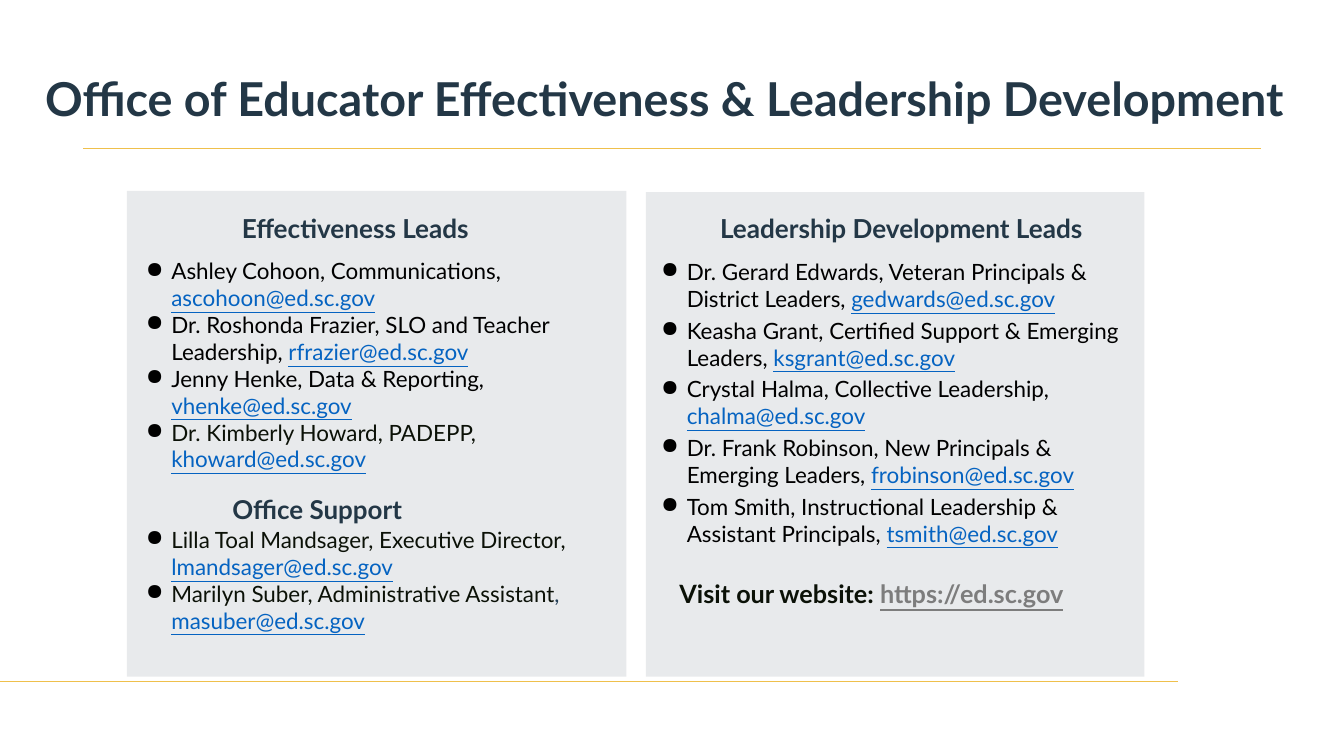
"""Build the contact slide of an educator effectiveness office."""
from dataclasses import dataclass
from typing import NamedTuple

import lxml.etree
import pptx
import pptx.dml.color
import pptx.enum.shapes
import pptx.enum.text
import pptx.oxml.ns
import pptx.util

EMU_PER_PX = 9144
FONT = "Lato"
NAVY = pptx.dml.color.RGBColor(0x23, 0x37, 0x46)
GOLD = pptx.dml.color.RGBColor(0xEF, 0xC0, 0x4C)
BLACK = pptx.dml.color.RGBColor(0x00, 0x00, 0x00)
INK = pptx.dml.color.RGBColor(0x0B, 0x11, 0x07)
SLATE = pptx.dml.color.RGBColor(0x23, 0x3F, 0x58)
LINK_BLUE = pptx.dml.color.RGBColor(0x05, 0x63, 0xC1)
GRAY = pptx.dml.color.RGBColor(0x7D, 0x7D, 0x7D)
LEFT = pptx.enum.text.PP_ALIGN.LEFT
CENTER = pptx.enum.text.PP_ALIGN.CENTER


class Box(NamedTuple):
    left: int
    top: int
    width: int
    height: int


@dataclass(frozen=True)
class Heading:
    text: str
    box: Box
    size: float
    align: int = CENTER
    line_points: float | None = None
    inset: tuple[int, int] = (0, 0)


@dataclass(frozen=True)
class Contact:
    role: str
    email: str
    color: pptx.dml.color.RGBColor = BLACK
    separator_color: pptx.dml.color.RGBColor | None = None
    gap_points: float = 0


@dataclass(frozen=True)
class ContactList:
    box: Box
    contacts: tuple[Contact, ...]
    margin: int
    level: int = 0
    gap_points: float = 0


HEADINGS = (
    Heading("Office of Educator Effectiveness & Leadership Development",
            Box(67, 118, 1958, 72), 50, LEFT, 50),
    Heading("Effectiveness Leads", Box(294, 329, 469, 36), 28, line_points=24),
    Heading("Office Support", Box(247, 728, 450, 62), 27.8, inset=(15, 7)),
    Heading("Leadership Development Leads", Box(1045, 329, 592, 36), 28, line_points=24),
)
EFFECTIVENESS = ContactList(Box(217, 383, 744, 565), (
    Contact("Ashley Cohoon, Communications", "ascohoon@ed.sc.gov"),
    Contact("Dr. Roshonda Frazier, SLO and Teacher Leadership", "rfrazier@ed.sc.gov"),
    Contact("Jenny Henke, Data & Reporting", "vhenke@ed.sc.gov"),
    Contact("Dr. Kimberly Howard, PADEPP", "khoward@ed.sc.gov", INK),
    Contact("Lilla Toal Mandsager, Executive Director", "lmandsager@ed.sc.gov", INK,
            gap_points=57.6),
    Contact("Marilyn Suber, Administrative Assistant", "masuber@ed.sc.gov", INK, SLATE),
), margin=38)
LEADERSHIP = ContactList(Box(961, 384, 722, 572), (
    Contact("Dr. Gerard Edwards, Veteran Principals & District Leaders", "gedwards@ed.sc.gov"),
    Contact("Keasha Grant, Certified Support & Emerging Leaders", "ksgrant@ed.sc.gov"),
    Contact("Crystal Halma, Collective Leadership", "chalma@ed.sc.gov"),
    Contact("Dr. Frank Robinson, New Principals & Emerging Leaders", "frobinson@ed.sc.gov"),
    Contact("Tom Smith, Instructional Leadership & Assistant Principals", "tsmith@ed.sc.gov"),
), margin=61, level=1, gap_points=5.3)
PANELS = (Box(189, 284, 743, 723), Box(961, 286, 742, 721))
RULES = ((124, 1876, 221), (0, 1753, 1014))


def px(length: int) -> pptx.util.Emu:
    """Turn a length in px into EMU."""
    return pptx.util.Emu(length * EMU_PER_PX)


def add_panel(slide, box: Box) -> None:
    """Draw a pale translucent panel."""
    panel = slide.shapes.add_shape(
        pptx.enum.shapes.MSO_SHAPE.RECTANGLE, *map(px, box))
    panel.shadow.inherit = False
    panel.line.fill.background()
    panel.fill.solid()
    panel.fill.fore_color.rgb = NAVY
    color = panel._element.spPr.find(".//" + pptx.oxml.ns.qn("a:srgbClr"))
    lxml.etree.SubElement(color, pptx.oxml.ns.qn("a:alpha"), val="10000")


def add_rule(slide, start: int, end: int, top: int) -> None:
    """Draw a thin horizontal gold rule."""
    rule = slide.shapes.add_connector(
        pptx.enum.shapes.MSO_CONNECTOR.STRAIGHT, px(start), px(top), px(end), px(top))
    rule.line.color.rgb = GOLD
    rule.line.width = pptx.util.Pt(1.5)
    lxml.etree.SubElement(rule._element.spPr, pptx.oxml.ns.qn("a:effectLst"))


def add_frame(slide, box: Box, inset: tuple[int, int] = (0, 0)):
    """Add a wrapping text box and return its text frame."""
    frame = slide.shapes.add_textbox(*map(px, box)).text_frame
    frame.word_wrap = True
    frame.margin_left = frame.margin_right = px(inset[0])
    frame.margin_top = frame.margin_bottom = px(inset[1])
    return frame


def add_run(paragraph, text: str, size: float, color: pptx.dml.color.RGBColor,
            bold: bool = False, underline: bool = False) -> None:
    """Append a formatted run to a paragraph."""
    run = paragraph.add_run()
    run.text = text
    run.font.name = FONT
    run.font.size = pptx.util.Pt(size)
    run.font.color.rgb = color
    run.font.bold = bold
    run.font.underline = underline


def add_heading(slide, heading: Heading) -> None:
    """Draw a bold navy heading."""
    paragraph = add_frame(slide, heading.box, heading.inset).paragraphs[0]
    paragraph.alignment = heading.align
    if heading.line_points:
        paragraph.line_spacing = pptx.util.Pt(heading.line_points)
    add_run(paragraph, heading.text, heading.size, NAVY, bold=True)


def set_bullet(paragraph, margin: int) -> None:
    """Give a paragraph a black round bullet with a hanging indent."""
    qn = pptx.oxml.ns.qn
    properties = paragraph._p.get_or_add_pPr()
    properties.set("marL", str(px(margin)))
    properties.set("indent", str(px(-38)))
    bullet_color = lxml.etree.SubElement(properties, qn("a:buClr"))
    lxml.etree.SubElement(bullet_color, qn("a:srgbClr"), val=str(BLACK))
    lxml.etree.SubElement(properties, qn("a:buChar"), char="●")


def add_contacts(slide, group: ContactList):
    """Draw a bulleted list of contacts and return its text frame."""
    frame = add_frame(slide, group.box)
    for index, contact in enumerate(group.contacts):
        paragraph = frame.add_paragraph() if index else frame.paragraphs[0]
        paragraph.level = group.level
        set_bullet(paragraph, group.margin)
        if index:
            paragraph.space_before = pptx.util.Pt(contact.gap_points or group.gap_points)
        if contact.separator_color:
            add_run(paragraph, contact.role, 24, contact.color)
            add_run(paragraph, ", ", 24, contact.separator_color)
        else:
            add_run(paragraph, contact.role + ", ", 24, contact.color)
        add_run(paragraph, contact.email, 24, LINK_BLUE, underline=True)
    return frame


def add_website(frame) -> None:
    """Append the website line below the contacts."""
    website = frame.add_paragraph()
    website.level = 1
    website._p.get_or_add_pPr().set("marL", str(px(50)))
    website._p.get_or_add_pPr().set("indent", "0")
    website.space_before = pptx.util.Pt(34)
    add_run(website, "Visit our website: ", 27, INK, bold=True)
    add_run(website, "https://ed.sc.gov", 27, GRAY, bold=True, underline=True)


def main() -> None:
    """Build and save the slide."""
    presentation = pptx.Presentation()
    presentation.slide_width, presentation.slide_height = px(2000), px(1125)
    slide = presentation.slides.add_slide(presentation.slide_layouts[6])
    for panel in PANELS:
        add_panel(slide, panel)
    for rule in RULES:
        add_rule(slide, *rule)
    for heading in HEADINGS:
        add_heading(slide, heading)
    add_contacts(slide, EFFECTIVENESS)
    add_website(add_contacts(slide, LEADERSHIP))
    presentation.save("out.pptx")


if __name__ == "__main__":
    main()
